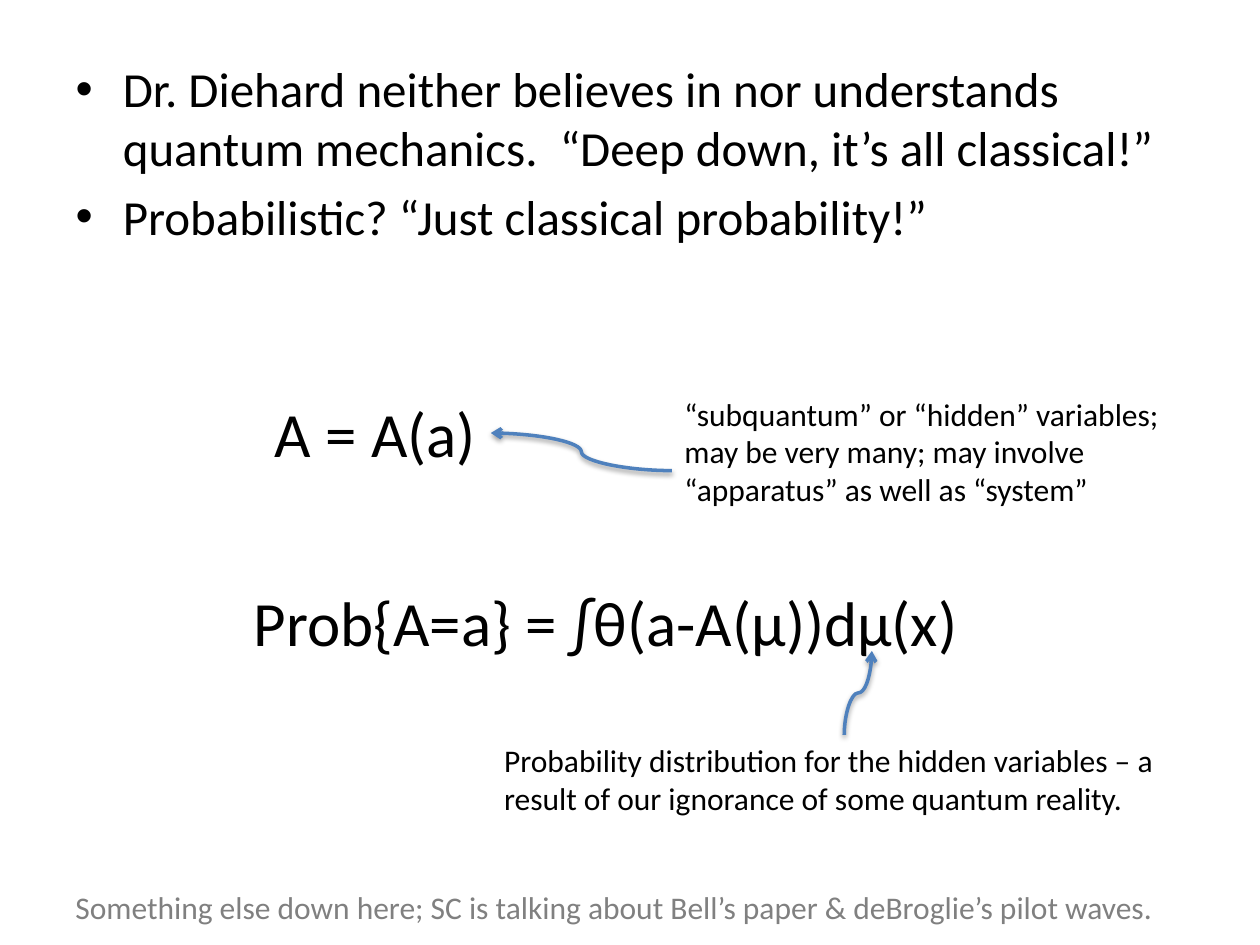
import pptx
import pptx.dml.color
import pptx.enum.shapes
import pptx.enum.text
import pptx.oxml
import pptx.oxml.ns
import pptx.util
from dataclasses import dataclass

Pt = pptx.util.Pt


@dataclass(frozen=True)
class Theme:
    font: str = "Calibri"
    ink: str = "000000"
    muted: str = "808080"
    accent: str = "4F81BD"
    bullet_size: float = 28
    formula_size: float = 36
    note_size: float = 18
    line_width: float = 2


THEME = Theme()


def color(value):
    return pptx.dml.color.RGBColor.from_string(value)


def write(para, text, size=THEME.note_size, ink=THEME.ink):
    span = para.add_run()
    span.text = text
    span.font.name = THEME.font
    span.font.size = Pt(size)
    span.font.color.rgb = color(ink)


def add_text(page, box, text, wrap=True, **style):
    frame = page.shapes.add_textbox(*map(Pt, box)).text_frame
    frame.word_wrap = wrap
    frame.auto_size = pptx.enum.text.MSO_AUTO_SIZE.SHAPE_TO_FIT_TEXT
    write(frame.paragraphs[0], text, **style)


def add_bullets(page, box, lines):
    body = page.placeholders[1]
    body.left, body.top, body.width, body.height = map(Pt, box)
    frame = body.text_frame
    for index, line in enumerate(lines):
        para = frame.add_paragraph() if index else frame.paragraphs[0]
        write(para, line, size=THEME.bullet_size)


def add_curved_arrow(page, start, end, vertical=False):
    """Draw an S-curve; a vertical one leaves and arrives vertically."""
    if vertical:
        # Ends before the quarter turn about the midpoint is applied
        middle_x, middle_y = [(a + b) / 2 for a, b in zip(start, end)]
        start, end = [(middle_x + y - middle_y, middle_y - x + middle_x)
                      for x, y in (start, end)]
    arrow = page.shapes.add_connector(
        pptx.enum.shapes.MSO_CONNECTOR.CURVE, *map(Pt, start + end))
    arrow.line.color.rgb = color(THEME.accent)
    arrow.line.width = Pt(THEME.line_width)
    properties = arrow._element.spPr
    if vertical:
        properties.find(pptx.oxml.ns.qn("a:xfrm")).set("rot", "5400000")
    namespace = pptx.oxml.ns.nsdecls("a")
    arrow.line._get_or_add_ln().append(
        pptx.oxml.parse_xml(f'<a:tailEnd {namespace} type="arrow"/>'))
    properties.append(pptx.oxml.parse_xml(
        f'<a:effectLst {namespace}><a:outerShdw blurRad="{Pt(3.1)}" '
        f'dist="{Pt(1.6)}" dir="5400000" rotWithShape="0">'
        '<a:srgbClr val="000000"><a:alpha val="38000"/></a:srgbClr>'
        '</a:outerShdw></a:effectLst>'))


def add_annotated_formula(page, formula_box, formula, note_box, note,
                          start, end, vertical=False):
    add_text(page, formula_box, formula, wrap=False, size=THEME.formula_size)
    add_text(page, note_box, note)
    add_curved_arrow(page, start, end, vertical)


def build_hidden_variables_slide(deck):
    page = deck.slides.add_slide(deck.slide_layouts[1])
    title = page.shapes.title._element
    title.getparent().remove(title)

    add_bullets(page, (36, 30, 648, 138), (
        "Dr. Diehard neither believes in nor understands quantum mechanics."
        "  “Deep down, it’s all classical!”",
        "Probabilistic? “Just classical probability!”",
    ))
    add_annotated_formula(
        page, (150, 222, 130.5, 51), "A = A(a)",
        (384, 222, 300, 94),
        "“subquantum” or “hidden” variables; may be very many; may involve "
        "“apparatus” as well as “system”",
        start=(384, 269), end=(280.5, 247.5))
    add_annotated_formula(
        page, (138, 330, 428.5, 51), "Prob{A=a} = ∫θ(a-A(μ))dμ(x)",
        (281, 420, 403, 73),
        "Probability distribution for the hidden variables – a result of "
        "our ignorance of some quantum reality.",
        start=(482.4, 420), end=(498.2, 372), vertical=True)
    add_text(
        page, (36, 504, 636.5, 29),
        "Something else down here; SC is talking about Bell’s paper & "
        "deBroglie’s pilot waves.", wrap=False, ink=THEME.muted)


def main():
    deck = pptx.Presentation()
    deck.slide_width, deck.slide_height = Pt(720), Pt(540)
    build_hidden_variables_slide(deck)
    deck.save("out.pptx")


if __name__ == "__main__":
    main()
